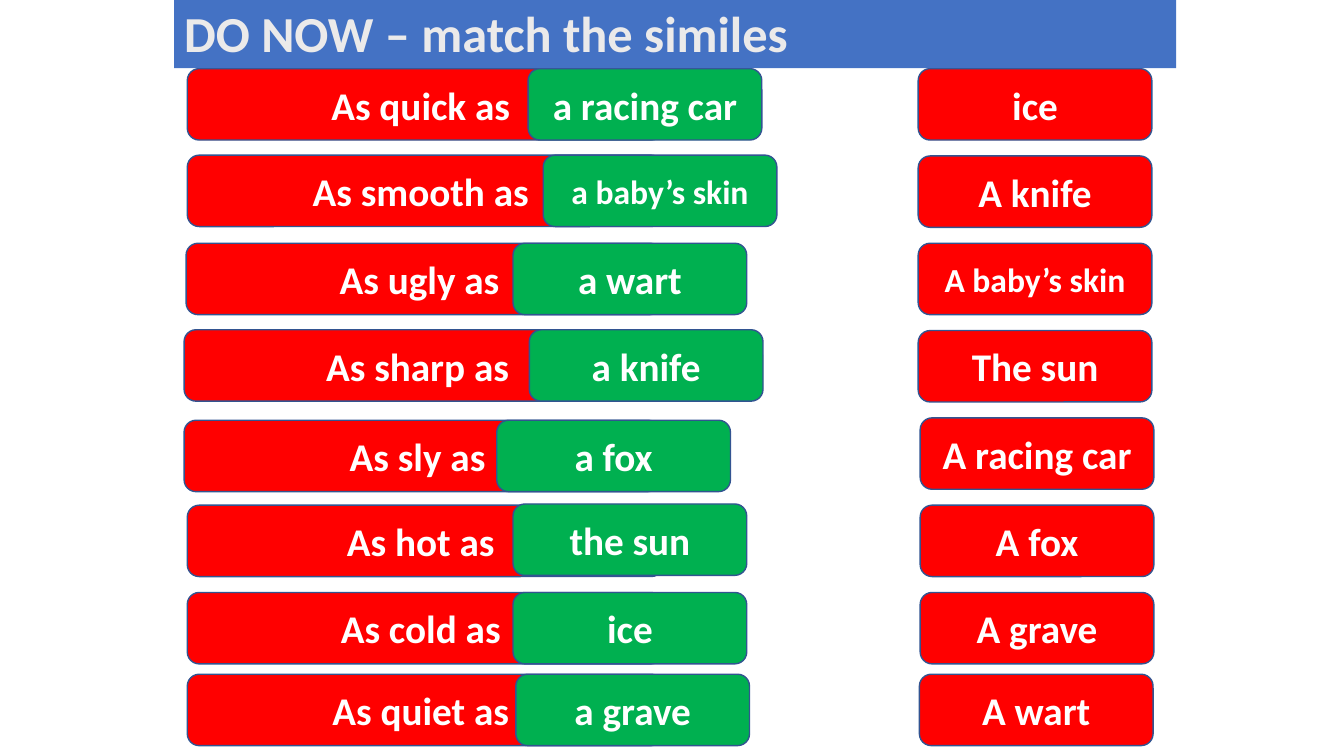
from dataclasses import dataclass

from lxml.etree import SubElement
from pptx import Presentation
from pptx.dml.color import RGBColor
from pptx.enum.shapes import MSO_SHAPE as Shape
from pptx.enum.text import MSO_ANCHOR as Anchor, MSO_AUTO_SIZE as AutoSize, PP_ALIGN as Align
from pptx.oxml.ns import qn
from pptx.util import Cm, Pt


@dataclass(frozen=True)
class Theme:
    """Colours and type sizes of the slide."""
    font: str = "Calibri"
    banner: str = "4472C4"
    banner_text: str = "EBEAEA"
    banner_outline: str = "3A5274"
    prompt: str = "FF0000"
    match: str = "00B050"
    border: str = "325491"
    card_text: str = "FFFFFF"
    title_size: int = 36
    card_size: int = 28
    small_size: int = 24


THEME = Theme()
ROW_PITCH = 2.2
CARD_HEIGHT = 1.8

PROMPTS = [
    ("As quick as ", 0, 0), ("As smooth as ", 0, -0.02),
    ("As ugly as ", -0.03, 0), ("As sharp as ", -0.08, -0.02),
    ("As sly as ", -0.08, 0.06), ("As hot as ", 0, 0),
    ("As cold as ", 0, 0), ("As quiet as ", 0, -0.14),
]
ANSWERS = [
    ("ice", 0, 0), ("A knife", 0, 0), ("A baby’s skin", 0, 0), ("The sun", 0, 0),
    ("A racing car", 0.05, 0), ("A fox", 0.05, 0),
    ("A grave", 0.05, 0), ("A wart", 0.03, -0.14),
]
MATCHES = [
    ("a racing car", 0.38, 0), ("a baby’s skin", 0.76, -0.02),
    ("a wart", 0, 0), ("a knife", 0.41, -0.02),
    ("a fox", -0.41, 0.06), ("the sun", 0, -0.03),
    ("ice", 0, 0), ("a grave", 0.07, -0.14),
]


def write_text(frame, text, *, size, color, align=Align.CENTER, anchor=Anchor.MIDDLE, outline=None):
    """Put one bold line of text in a frame."""
    frame.word_wrap = True
    frame.vertical_anchor = anchor
    paragraph = frame.paragraphs[0]
    paragraph.alignment = align
    run = paragraph.add_run()
    run.text = text
    run.font.name = THEME.font
    run.font.size = Pt(size)
    run.font.bold = True
    run.font.color.rgb = RGBColor.from_string(color)
    if outline:
        properties = run.font._element
        stroke = SubElement(properties, qn("a:ln"), w=str(Pt(1)))
        SubElement(SubElement(stroke, qn("a:solidFill")), qn("a:srgbClr"), val=outline)
        properties.insert(0, stroke)


def add_panel(slide, kind, box, fill, border=None):
    """Draw a filled shape in a box given in centimetres."""
    panel = slide.shapes.add_shape(kind, *map(Cm, box))
    panel.shadow.inherit = False
    panel.fill.solid()
    panel.fill.fore_color.rgb = RGBColor.from_string(fill)
    if border:
        panel.line.color.rgb = RGBColor.from_string(border)
        panel.line.width = Pt(1)
    else:
        panel.line.fill.background()
    return panel


def add_banner(slide, box, title):
    """Draw the title banner."""
    banner = add_panel(slide, Shape.RECTANGLE, box, THEME.banner)
    write_text(banner.text_frame, title, size=THEME.title_size, color=THEME.banner_text,
               align=Align.LEFT, anchor=Anchor.TOP, outline=THEME.banner_outline)
    banner.text_frame.auto_size = AutoSize.SHAPE_TO_FIT_TEXT


def add_card_column(slide, box, cards, fill):
    """Stack cards down a column, each shifted by its own offset."""
    left, top, width = box
    for row, (phrase, shift_x, shift_y) in enumerate(cards):
        card_box = (left + shift_x, top + row * ROW_PITCH + shift_y, width, CARD_HEIGHT)
        card = add_panel(slide, Shape.ROUNDED_RECTANGLE, card_box, fill, THEME.border)
        size = THEME.small_size if phrase.endswith("skin") else THEME.card_size
        write_text(card.text_frame, phrase, size=size, color=THEME.card_text)


def main():
    """Build the simile matching slide."""
    deck = Presentation()
    deck.slide_width, deck.slide_height = Cm(33.87), Cm(19.05)
    slide = deck.slides.add_slide(deck.slide_layouts[6])
    add_card_column(slide, (4.72, 1.73, 11.99), PROMPTS, THEME.prompt)
    add_card_column(slide, (23.14, 1.73, 5.89), ANSWERS, THEME.prompt)
    add_card_column(slide, (12.93, 1.73, 5.89), MATCHES, THEME.match)
    add_banner(slide, (4.39, -0.08, 25.25, 1.8), "DO NOW – match the similes")
    deck.save("out.pptx")


if __name__ == "__main__":
    main()
